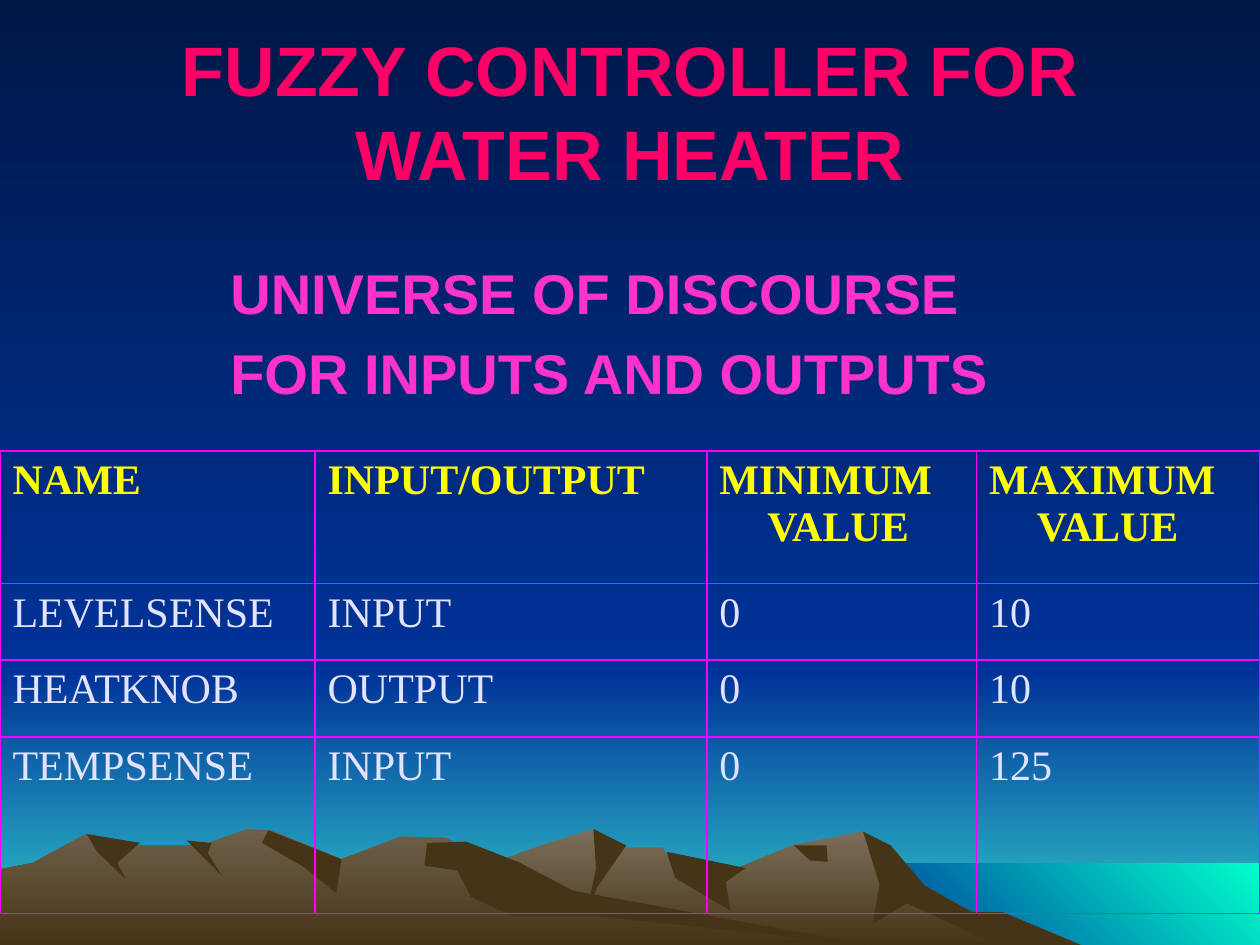
from lxml import etree
from pptx import Presentation
from pptx.dml.color import RGBColor
from pptx.enum.text import MSO_ANCHOR, PP_ALIGN
from pptx.oxml.ns import qn
from pptx.util import Emu, Pt

CENTER, LEFT = PP_ALIGN.CENTER, PP_ALIGN.LEFT
MIDDLE, TOP = MSO_ANCHOR.MIDDLE, MSO_ANCHOR.TOP
PX = 9144  # 100 px to the inch
WIDTH, HEIGHT = 1000, 750
HORIZON = 533

# Content
TITLE = "FUZZY CONTROLLER FOR WATER HEATER"
SUBTITLE = ["UNIVERSE OF DISCOURSE", "FOR INPUTS AND OUTPUTS"]
VARIABLES = [
    ("NAME", "INPUT/OUTPUT", "MINIMUM VALUE", "MAXIMUM VALUE"),
    ("LEVELSENSE", "INPUT", "0", "10"),
    ("HEATKNOB", "OUTPUT", "0", "10"),
    ("TEMPSENSE", "INPUT", "0", "125"),
]
COLUMN_WIDTHS = [250, 311, 214, 225]
ROW_HEIGHTS = [105, 61, 61, 140]

# Colours: a pair is a gradient from first to last
NIGHT, BLUE, TEAL, AQUA = "001747", "003399", "33CCCC", "00FFCC"
BROWN, RIGHT_PEAK, LEFT_PEAK = "463416", "7D6F5C", "6F604A"
RED, PINK, YELLOW, PALE, MAGENTA = "FF0066", "FF33CC", "FFFF00", "E3E3FF", "FF00FF"
DOWNWARD, UP_RIGHT = 270, 45

# Sky and sea: left, top, right, bottom, colours, gradient angle
BANDS = [
    (0, HORIZON, WIDTH, HEIGHT, (BLUE, TEAL), DOWNWARD),
    (0, 0, WIDTH, HORIZON, (NIGHT, BLUE), DOWNWARD),
    (683, 685, WIDTH, HEIGHT, (BLUE, AQUA), UP_RIGHT),
]

# Mountain ranges: peak colour, ridge, shadows
RANGES = [
    (RIGHT_PEAK,
     [(258, 750), (355, 698), (430, 671), (471, 658), (486, 673), (526, 673),
      (536, 690), (566, 697), (629, 671), (685, 660), (723, 698), (821, 750)],
     [[(685, 660), (707, 671), (734, 703), (771, 724), (796, 724), (858, 750),
       (792, 750), (720, 717), (693, 733), (698, 702)],
      [(471, 658), (497, 671), (474, 704), (465, 727), (473, 690)],
      [(529, 676), (592, 689), (576, 700), (580, 723), (536, 697)],
      [(630, 671), (656, 671), (657, 684), (643, 683)]]),
    (LEFT_PEAK,
     [(0, 750), (0, 690), (26, 685), (68, 662), (94, 671), (160, 671),
      (196, 658), (215, 659), (271, 682), (318, 664), (354, 665), (432, 712),
      (690, 750)],
     [[(213, 659), (271, 682), (267, 709), (241, 688), (208, 669)],
      [(339, 669), (370, 668), (411, 684), (455, 707), (690, 750), (472, 727),
       (407, 727), (374, 712), (363, 691), (337, 687)],
      [(148, 667), (168, 669), (165, 677), (176, 695)],
      [(69, 662), (111, 669), (93, 685), (100, 698), (77, 676)]]),
]


def px(value):
    return Emu(value * PX)


def rgb(value):
    return RGBColor.from_string(value)


def write(frame, lines, size, color, font="Arial", bold=True, align=LEFT,
          anchor=TOP, margin=0, indent=0, before=0):
    frame.word_wrap = True
    frame.vertical_anchor = anchor
    for number, line in enumerate(lines):
        paragraph = frame.add_paragraph() if number else frame.paragraphs[0]
        paragraph.alignment = align
        paragraph.space_before = Pt(before)
        layout = paragraph._p.get_or_add_pPr()
        layout.set("marL", str(px(margin)))
        layout.set("indent", str(px(indent)))
        run = paragraph.add_run()
        run.text = line
        run.font.size, run.font.bold, run.font.name = Pt(size), bold, font
        run.font.color.rgb = rgb(color)


def draw_outline(slide, outline, colors, angle=None):
    builder = slide.shapes.build_freeform(*outline[0], scale=PX)
    builder.add_line_segments(outline[1:], close=True)
    part = builder.convert_to_shape()
    part.shadow.inherit = False
    part.line.fill.background()
    if angle is None:
        part.fill.solid()
        part.fill.fore_color.rgb = rgb(colors[0])
        return
    part.fill.gradient()
    part.fill.gradient_angle = angle
    for stop, color, position in zip(part.fill.gradient_stops, colors, (0, 1)):
        stop.color.rgb = rgb(color)
        stop.position = position


def draw_scenery(slide):
    for left, top, right, bottom, colors, angle in BANDS:
        corners = [(left, top), (right, top), (right, bottom), (left, bottom)]
        draw_outline(slide, corners, colors, angle)
    for peak, ridge, shadows in RANGES:
        draw_outline(slide, ridge, (peak, BROWN), DOWNWARD)
        for shadow in shadows:
            draw_outline(slide, shadow, (BROWN,))


def add_borders(cell, color):
    properties = cell._tc.get_or_add_tcPr()
    for place, side in enumerate(("a:lnL", "a:lnR", "a:lnT", "a:lnB")):
        border = etree.Element(qn(side), w=str(Pt(1)))
        fill = etree.SubElement(border, qn("a:solidFill"))
        etree.SubElement(fill, qn("a:srgbClr"), val=color)
        properties.insert(place, border)


def add_variables(slide):
    table = slide.shapes.add_table(
        len(VARIABLES), len(COLUMN_WIDTHS), 0, px(358),
        px(sum(COLUMN_WIDTHS)), px(sum(ROW_HEIGHTS))).table
    table.first_row = table.horz_banding = False
    for column, width in zip(table.columns, COLUMN_WIDTHS):
        column.width = px(width)
    for r, (values, height) in enumerate(zip(VARIABLES, ROW_HEIGHTS)):
        table.rows[r].height = px(height)
        header = r == 0
        for c, value in enumerate(values):
            cell = table.cell(r, c)
            cell.fill.background()
            write(cell.text_frame, [value], 24, YELLOW if header else PALE,
                  font="Times New Roman", bold=header, margin=38, indent=-38)
            add_borders(cell, MAGENTA)


def main():
    deck = Presentation()
    deck.slide_width, deck.slide_height = px(WIDTH), px(HEIGHT)
    slide = deck.slides.add_slide(deck.slide_layouts[6])

    draw_scenery(slide)

    # Headings
    title = slide.shapes.add_textbox(px(50), px(25), px(900), px(125))
    write(title.text_frame, [TITLE], 40, RED, align=CENTER, anchor=MIDDLE)
    subtitle = slide.shapes.add_textbox(0, px(200), px(WIDTH), px(458))
    write(subtitle.text_frame, SUBTITLE, 32, PINK, margin=173, before=7.5)

    add_variables(slide)
    deck.save("out.pptx")


if __name__ == "__main__":
    main()
